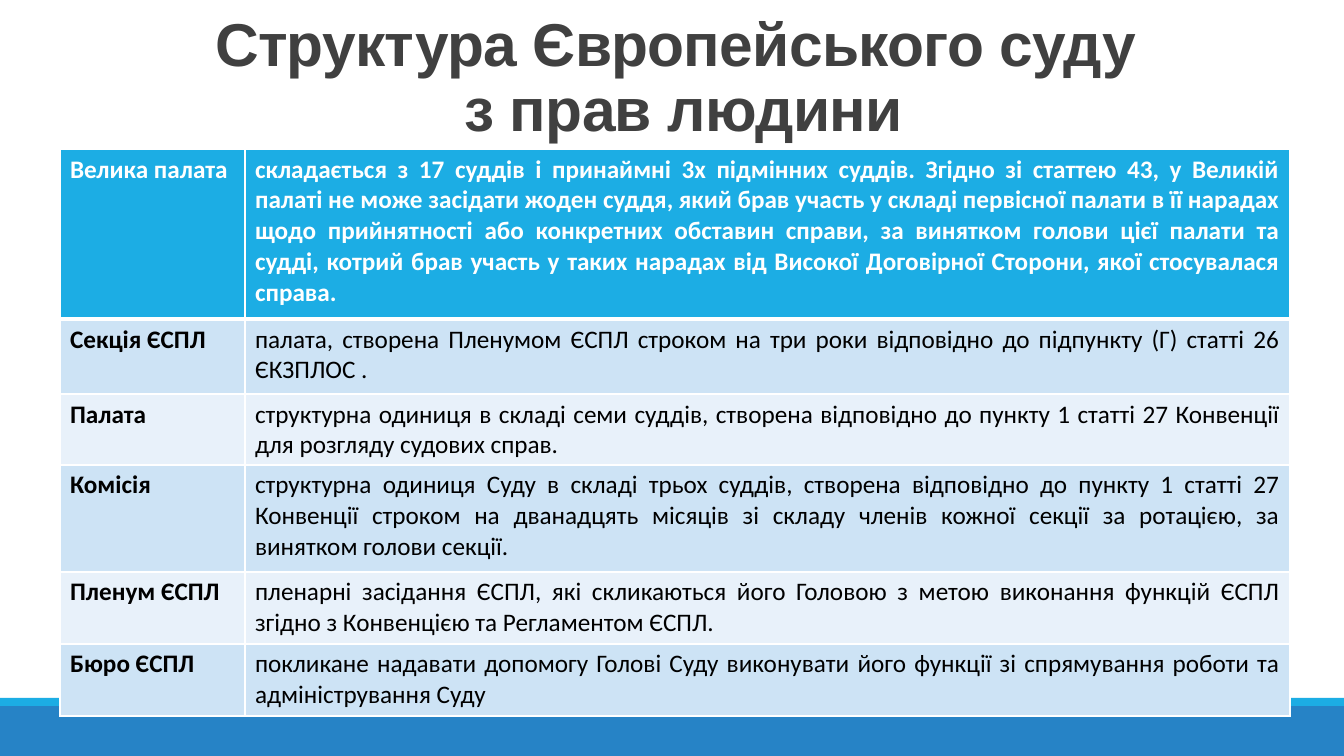
import pptx
import pptx.util
import pptx.dml.color
import pptx.enum.shapes
import pptx.enum.text
import pptx.oxml
import pptx.oxml.ns

RGBColor = pptx.dml.color.RGBColor
Pt = pptx.util.Pt
PP_ALIGN = pptx.enum.text.PP_ALIGN

WHITE = RGBColor(0xFF, 0xFF, 0xFF)
BLACK = RGBColor(0x00, 0x00, 0x00)
TITLE_GREY = RGBColor(0x40, 0x40, 0x40)
BLUE = RGBColor(0x26, 0x83, 0xC6)
CYAN = RGBColor(0x1C, 0xAD, 0xE4)
BAND_DARK = RGBColor(0xCD, 0xE3, 0xF5)
BAND_LIGHT = RGBColor(0xE8, 0xF1, 0xFA)


def px(n):
    return round(n * 914400 / 100.8)


def add_border(cell, side, width):
    cell._tc.get_or_add_tcPr().append(pptx.oxml.parse_xml(
        f'<a:{side} {pptx.oxml.ns.nsdecls("a")} w="{Pt(width)}">'
        f'<a:solidFill><a:srgbClr val="{WHITE}"/></a:solidFill></a:{side}>'))


prs = pptx.Presentation()
prs.slide_width, prs.slide_height = px(1344), px(756)
s = prs.slides.add_slide(prs.slide_layouts[6])

# Footer bands
for top, height, color in [(706, 50, BLUE), (698, 8, CYAN)]:
    sp = s.shapes.add_shape(pptx.enum.shapes.MSO_SHAPE.RECTANGLE,
                            0, px(top), px(1344), px(height))
    sp.shadow.inherit = False
    sp.fill.solid()
    sp.fill.fore_color.rgb = color
    sp.line.fill.background()

# Title
sp = s.shapes.add_textbox(px(121), px(31), px(1109), px(118))
tf = sp.text_frame
tf.word_wrap = True
tf.vertical_anchor = pptx.enum.text.MSO_ANCHOR.BOTTOM
tf.text = "Структура Європейського суду\v з прав людини"
p = tf.paragraphs[0]
p.alignment = PP_ALIGN.CENTER
p.line_spacing = 0.89
for r in p.runs:
    r.font.name = "Arial"
    r.font.size = Pt(43.2)
    r.font.bold = True
    r.font.color.rgb = TITLE_GREY
    r.font._element.set("spc", "-50")

# Table of the court's bodies: row height, name, description
bodies = [
    (170, "Велика палата",
     "складається з 17 суддів і принаймні 3х підмінних суддів. Згідно зі "
     "статтею 43, у Великій палаті не може засідати жоден суддя, який брав "
     "участь у складі первісної палати в її нарадах щодо прийнятності або "
     "конкретних обставин справи, за винятком голови цієї палати та судді, "
     "котрий брав участь у таких нарадах від Високої Договірної Сторони, "
     "якої стосувалася справа."),
    (75, "Секція ЄСПЛ",
     "палата, створена Пленумом ЄСПЛ строком на три роки відповідно до "
     "підпункту (Г) статті 26 ЄКЗПЛОС ."),
    (71, "Палата",
     "структурна одиниця в складі семи суддів, створена відповідно до "
     "пункту 1 статті 27 Конвенції для розгляду судових справ."),
    (107, "Комісія",
     "структурна одиниця Суду в складі трьох суддів, створена відповідно до "
     "пункту 1 статті 27 Конвенції строком на дванадцять місяців зі складу "
     "членів кожної секції за ротацією, за винятком голови секції. "),
    (72, "Пленум ЄСПЛ",
     "пленарні засідання ЄСПЛ, які скликаються його Головою з метою "
     "виконання функцій ЄСПЛ згідно з Конвенцією та Регламентом ЄСПЛ."),
    (72, "Бюро ЄСПЛ",
     "покликане надавати допомогу Голові Суду виконувати його функції зі "
     "спрямування роботи та адміністрування Суду"),
]
col_widths = [185, 1045]
table = s.shapes.add_table(len(bodies), 2, px(60), px(149), px(sum(col_widths)),
                           px(sum(b[0] for b in bodies))).table
for column, width in zip(table.columns, col_widths):
    column.width = px(width)

for i, (height, *texts) in enumerate(bodies):
    table.rows[i].height = px(height)
    header = i == 0
    for j, text in enumerate(texts):
        cell = table.cell(i, j)
        add_border(cell, "lnL", 1)
        add_border(cell, "lnR", 1)
        add_border(cell, "lnT", 3 if i == 1 else 1)
        add_border(cell, "lnB", 3 if header else 1)
        cell.fill.solid()
        cell.fill.fore_color.rgb = CYAN if header else BAND_DARK if i % 2 else BAND_LIGHT
        cell.text_frame.text = text
        p = cell.text_frame.paragraphs[0]
        p.alignment = PP_ALIGN.JUSTIFY if j else PP_ALIGN.LEFT
        r = p.runs[0]
        r.font.name = "Calibri"
        r.font.size = Pt(18)
        r.font.bold = header or j == 0
        r.font.color.rgb = WHITE if header else BLACK

prs.save("out.pptx")
